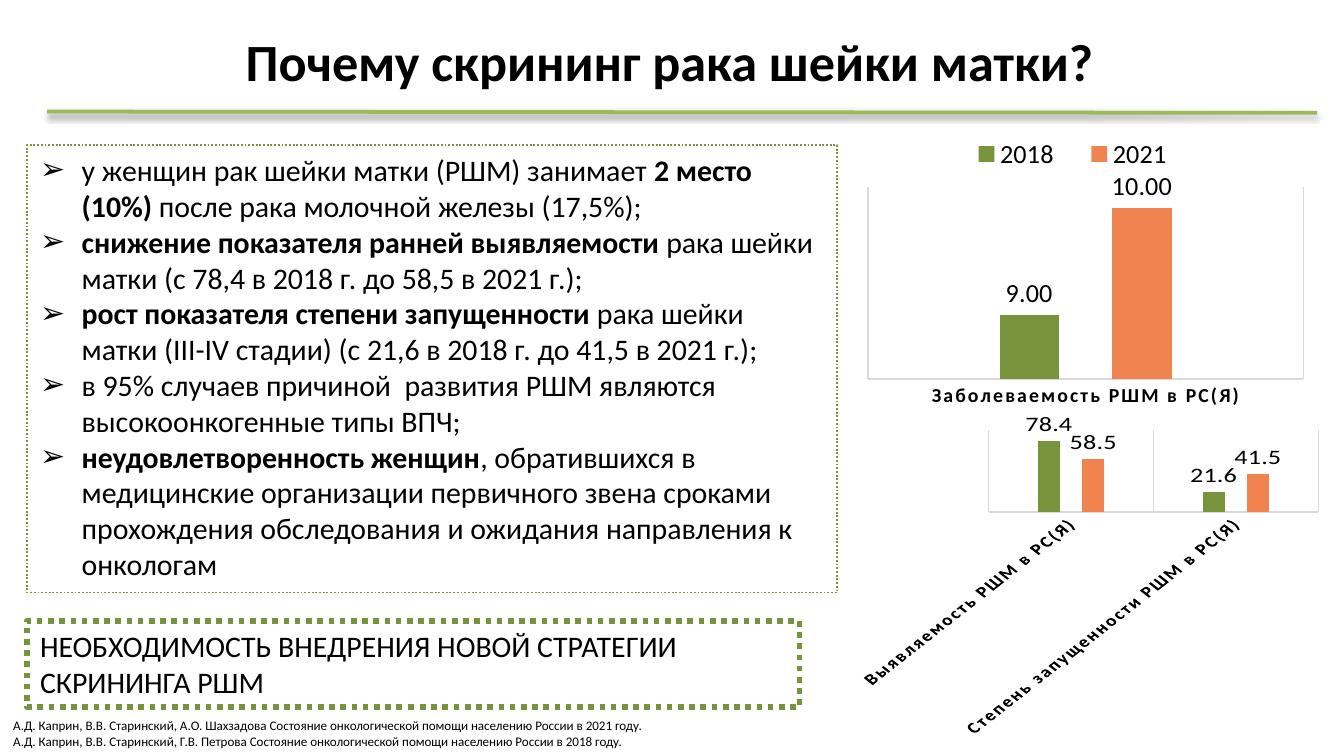
from lxml import etree
from pptx import Presentation
from pptx.chart.data import CategoryChartData
from pptx.dml.color import RGBColor
from pptx.enum.chart import XL_CHART_TYPE as CT, XL_LABEL_POSITION as LP
from pptx.enum.chart import XL_LEGEND_POSITION as LEG, XL_TICK_MARK as TM
from pptx.enum.chart import XL_TICK_LABEL_POSITION as TLP
from pptx.enum.dml import MSO_LINE
from pptx.enum.shapes import MSO_CONNECTOR, MSO_SHAPE
from pptx.enum.text import MSO_ANCHOR, PP_ALIGN
from pptx.oxml import parse_xml
from pptx.oxml.ns import nsdecls, qn
from pptx.util import Inches, Pt

BLACK = RGBColor(0x00, 0x00, 0x00)
GREEN = RGBColor(0x77, 0x93, 0x3C)
LIME = RGBColor(0x9B, 0xBB, 0x59)
ORANGE = RGBColor(0xF0, 0x84, 0x51)
GREY = RGBColor(0xD9, 0xD9, 0xD9)
FONT = "Calibri"


def style(font, size, bold=False):
    font.name, font.size, font.bold = FONT, Pt(size), bold
    font.color.rgb = BLACK


def add_text(sp, paragraphs, size, wrap=True):
    """Fill a shape with paragraphs, each a list of (text, bold) runs."""
    tf = sp.text_frame
    tf.word_wrap = wrap
    tf.vertical_anchor = MSO_ANCHOR.TOP
    for i, runs in enumerate(paragraphs):
        p = tf.paragraphs[0] if i == 0 else tf.add_paragraph()
        p.alignment = PP_ALIGN.LEFT
        for text, bold in runs:
            r = p.add_run()
            r.text = text
            style(r.font, size, bold)
    return tf


prs = Presentation()
prs.slide_width, prs.slide_height = Inches(10), Inches(10) * 9 // 16
s = prs.slides.add_slide(prs.slide_layouts[6])

# Title
sp = s.shapes.add_textbox(Inches(0.48), Inches(-0.02), Inches(9), Inches(0.94))
tf = add_text(sp, [[("Почему скрининг рака шейки матки?", True)]], 28)
tf.vertical_anchor = MSO_ANCHOR.MIDDLE
tf.paragraphs[0].alignment = PP_ALIGN.CENTER

# Charts: incidence above, detection and late stages below
charts = []
for box, cats, series, overlap, scale, fmt, rotation in (
        ((6.23, 1, 3.81, 2.43), ["Заболеваемость РШМ в РС(Я)"],
         [("2018", [9]), ("2021", [10])], -90, (8.4, 10.2), "0.00", 0),
        ((6.31, 3.06, 3.57, 2.43),
         ["Выявляемость РШМ в РС(Я)", "Степень запущенности РШМ в РС(Я)"],
         [("Series 1", [78.4, 21.6]), ("Series 2", [58.5, 41.5])],
         -100, (0, 90), "General", -45)):
    data = CategoryChartData()
    data.categories = cats
    for name, values in series:
        data.add_series(name, values)
    chart = s.shapes.add_chart(CT.COLUMN_CLUSTERED, *map(Inches, box), data).chart
    charts.append(chart)
    style(chart.font, 10)
    chart.has_title = chart.has_legend = False

    va, ca = chart.value_axis, chart.category_axis
    va.visible = va.has_major_gridlines = False
    va.minimum_scale, va.maximum_scale = scale
    ca.has_major_gridlines = True
    ca.major_tick_mark = ca.minor_tick_mark = TM.NONE
    ca.tick_label_position = TLP.NEXT_TO_AXIS
    for line in (ca.format.line, ca.major_gridlines.format.line):
        line.color.rgb, line.width = GREY, Pt(0.75)
    style(ca.tick_labels.font, 10.6, True)
    tx = ca._element.find(qn("c:txPr"))
    tx.find(qn("a:bodyPr")).set("rot", str(rotation * 60000))
    tx.find(".//" + qn("a:defRPr")).set("spc", "120")

    bars = chart.plots[0]
    bars.gap_width, bars.overlap, bars.vary_by_categories = 444, overlap, False
    for ser, color in zip(bars.series, (GREEN, ORANGE)):
        ser.format.fill.solid()
        ser.format.fill.fore_color.rgb = color
        dl = ser.data_labels
        dl.show_value, dl.position = True, LP.OUTSIDE_END
        dl.number_format, dl.number_format_is_linked = fmt, False
        style(dl.font, 14)

# Legend and fixed plot area of the incidence chart
chart = charts[0]
chart.has_legend = True
chart.legend.position = LEG.TOP
chart.legend.include_in_layout = False
style(chart.legend.font, 14)
area = chart._chartSpace.find(".//" + qn("c:plotArea"))
edges = [("xMode", "edge"), ("yMode", "edge")]
for parent, index, head, place in (
        (area, 0, [("layoutTarget", "inner")], (0.06, 0.16, 0.85, 0.59)),
        (chart.legend._element, 1, [], (0.22, 0.01, 0.48, 0.1))):
    for old in parent.findall(qn("c:layout")):
        parent.remove(old)
    layout = etree.Element(qn("c:layout"))
    manual = etree.SubElement(layout, qn("c:manualLayout"))
    for tag, val in head + edges + list(zip("xywh", place)):
        etree.SubElement(manual, qn("c:" + tag)).set("val", str(val))
    parent.insert(index, layout)

# Framed texts
conclusion = [[("НЕОБХОДИМОСТЬ ВНЕДРЕНИЯ НОВОЙ СТРАТЕГИИ СКРИНИНГА РШМ", False)]]
reasons = [
    [("у женщин рак шейки матки (РШМ) занимает ", False), ("2 место (10%) ", True),
     ("после рака молочной железы (17,5%);", False)],
    [("снижение показателя ранней выявляемости", True),
     (" рака шейки матки (с 78,4 в 2018 г. до 58,5 в 2021 г.);", False)],
    [("рост показателя степени запущенности ", True),
     ("рака шейки матки (III-IV стадии) (с 21,6 в 2018 г. до 41,5 в 2021 г.);", False)],
    [("в 95% случаев причиной  развития РШМ являются высокоонкогенные типы ВПЧ;", False)],
    [("неудовлетворенность женщин", True),
     (", обратившихся в медицинские организации первичного звена сроками "
      "прохождения обследования и ожидания направления к онкологам", False)],
]
for top, width, height, weight, paragraphs in (
        (4.62, 5.75, 0.64, 3, conclusion), (1.08, 6.03, 3.33, 1, reasons)):
    sp = s.shapes.add_shape(MSO_SHAPE.RECTANGLE, Inches(0.2), Inches(top),
                            Inches(width), Inches(height))
    sp.shadow.inherit = False
    sp.fill.background()
    sp.line.color.rgb, sp.line.width = GREEN, Pt(weight)
    sp.line.dash_style = MSO_LINE.ROUND_DOT
    tf = add_text(sp, paragraphs, 16)

# Arrow bullets for the reasons
for p in tf.paragraphs:
    pPr = p._p.get_or_add_pPr()
    pPr.set("marL", str(Inches(0.31)))
    pPr.set("indent", str(-Inches(0.31)))
    etree.SubElement(pPr, qn("a:buFont")).set("typeface", FONT)
    etree.SubElement(pPr, qn("a:buChar")).set("char", "➢")

# Sources
sp = s.shapes.add_textbox(Inches(0), Inches(5.29), Inches(4.98), Inches(0.34))
add_text(sp, [
    [("А.Д. Каприн, В.В. Старинский, А.О. Шахзадова Состояние онкологической "
      "помощи населению России в 2021 году.", False)],
    [("А.Д. Каприн, В.В. Старинский, Г.В. Петрова Состояние онкологической "
      "помощи населению России в 2018 году.", False)],
], 7, wrap=False)

# Title rule with a soft shadow
rule = s.shapes.add_connector(MSO_CONNECTOR.STRAIGHT, Inches(0.35), Inches(0.83),
                              Inches(9.8), Inches(0.84))
rule.line.color.rgb, rule.line.width = LIME, Pt(2)
rule._element.spPr.append(parse_xml(
    f'<a:effectLst {nsdecls("a")}><a:outerShdw blurRad="{Pt(3.1)}" dist="{Pt(1.6)}" '
    'dir="5400000" rotWithShape="0"><a:srgbClr val="000000"><a:alpha val="38000"/>'
    '</a:srgbClr></a:outerShdw></a:effectLst>'))

prs.save("out.pptx")
